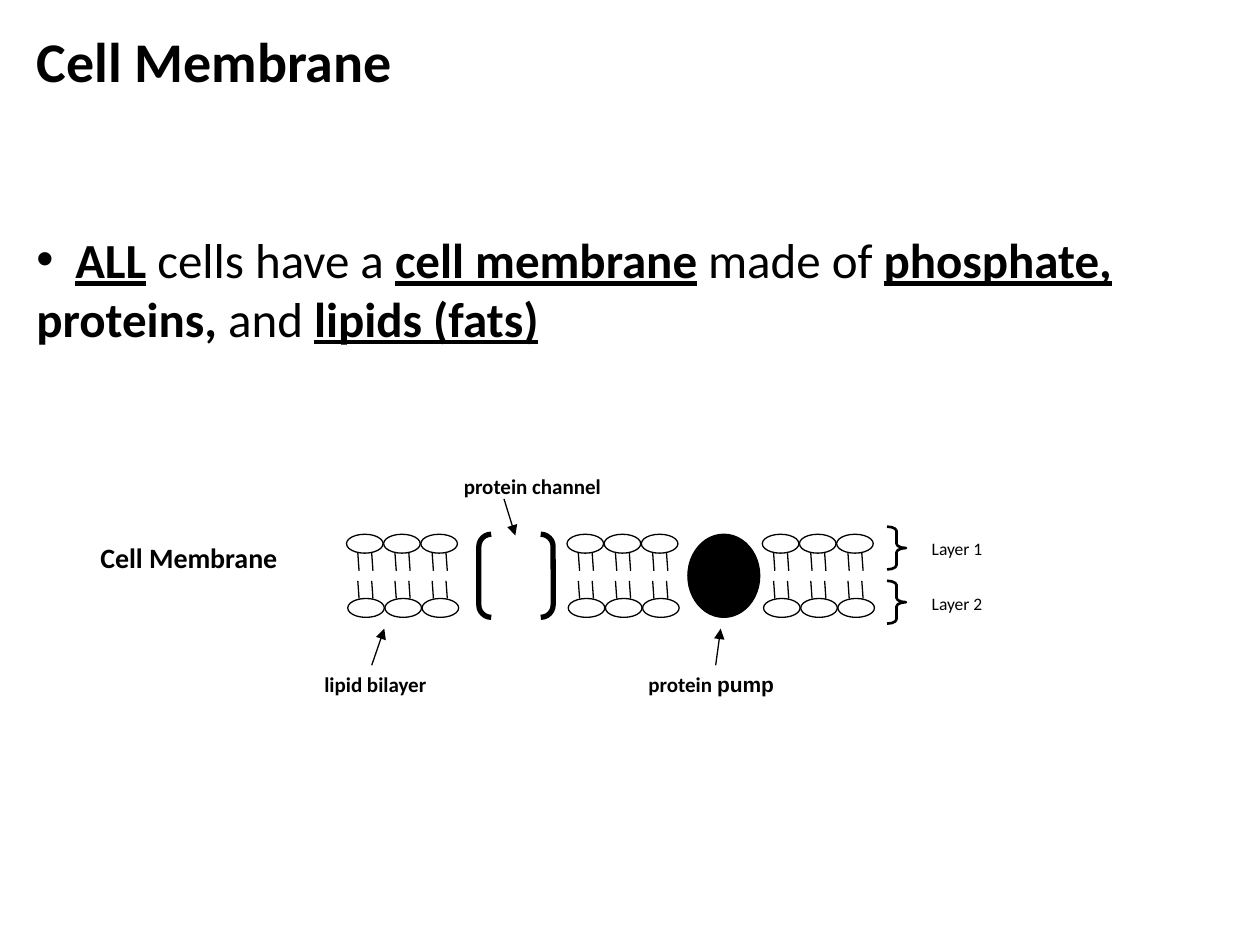
from lxml import etree
from pptx import Presentation
from pptx.dml.color import RGBColor
from pptx.enum.shapes import MSO_CONNECTOR, MSO_SHAPE
from pptx.enum.text import MSO_ANCHOR, MSO_AUTO_SIZE, PP_ALIGN
from pptx.oxml.ns import qn
from pptx.util import Inches, Pt

STRAIGHT = MSO_CONNECTOR.STRAIGHT
ELLIPSE = MSO_SHAPE.OVAL
RECTANGLE = MSO_SHAPE.RECTANGLE
BRACKETS = MSO_SHAPE.DOUBLE_BRACKET
BRACE = MSO_SHAPE.RIGHT_BRACE
LEFT, CENTER = PP_ALIGN.LEFT, PP_ALIGN.CENTER
TOP, MIDDLE = MSO_ANCHOR.TOP, MSO_ANCHOR.MIDDLE
NO_AUTOFIT = MSO_AUTO_SIZE.NONE

BLACK, WHITE = "000000", "FFFFFF"
FONT = "Calibri"

presentation = Presentation()
presentation.slide_width = Inches(10)
presentation.slide_height = Inches(7.5)
slide = presentation.slides.add_slide(presentation.slide_layouts[5])


def add_outlined(kind, left, top, width, height, fill=None, line=BLACK, weight=0.75):
    """Add a preset shape without shadow; no fill colour leaves it open."""
    shape = slide.shapes.add_shape(
        kind, Inches(left), Inches(top), Inches(width), Inches(height))
    shape.shadow.inherit = False
    if fill:
        shape.fill.solid()
        shape.fill.fore_color.rgb = RGBColor.from_string(fill)
    else:
        shape.fill.background()
    shape.line.color.rgb = RGBColor.from_string(line)
    shape.line.width = Pt(weight)
    return shape


def add_line(x1, y1, x2, y2, arrow=False):
    connector = slide.shapes.add_connector(
        STRAIGHT, Inches(x1), Inches(y1), Inches(x2), Inches(y2))
    connector.line.color.rgb = RGBColor.from_string(BLACK)
    connector.line.width = Pt(0.75)
    if arrow:
        line = connector.line._get_or_add_ln()
        etree.SubElement(line, qn("a:tailEnd"), type="triangle")
    etree.SubElement(connector._element.spPr, qn("a:effectLst"))


# Title
title = slide.shapes.title
title.left, title.top = Inches(0.19), Inches(0.16)
title.width, title.height = Inches(9.5), Inches(0.64)
title.text_frame.auto_size = NO_AUTOFIT
title.text_frame.vertical_anchor = MIDDLE
title.text_frame.text = "Cell Membrane"
paragraph = title.text_frame.paragraphs[0]
paragraph.alignment = LEFT
paragraph.font.name = FONT
paragraph.font.size = Pt(32)
paragraph.font.bold = True
paragraph.font.color.rgb = RGBColor.from_string(BLACK)

# Bulleted statement: text, bold, underline
statement = [
    ("\t", True, False),
    ("ALL", True, True),
    (" cells have a ", False, False),
    ("cell membrane", True, True),
    (" made of ", False, False),
    ("phosphate,", True, True),
    (" proteins,", True, False),
    (" and ", False, False),
    ("lipids (fats)", True, True),
]
body = slide.shapes.add_textbox(Inches(0.19), Inches(1.77), Inches(9.5), Inches(1.05))
body.text_frame.word_wrap = True
paragraph = body.text_frame.paragraphs[0]
paragraph.font.name = FONT
paragraph.font.size = Pt(28)
paragraph.font.color.rgb = RGBColor.from_string(BLACK)
for text, bold, underline in statement:
    run = paragraph.add_run()
    run.text = text
    run.font.bold = bold
    run.font.underline = underline
properties = paragraph._p.get_or_add_pPr()
properties.set("marL", "0")
properties.set("indent", "0")
bullet_parts = [
    etree.Element(qn("a:buFont"), typeface="Arial"),
    etree.Element(qn("a:buChar"), char="•"),
    etree.Element(qn("a:tabLst")),
]
etree.SubElement(bullet_parts[2], qn("a:tab"), pos=str(Inches(0.31)), algn="l")
for position, part in enumerate(bullet_parts):
    properties.insert(position, part)

# Lipid bilayer: three stretches of three lipids, mirrored in two layers
HEAD_WIDTH, HEAD_HEIGHT, HEAD_PITCH = 0.29, 0.15, 0.295
for stretch_left in (2.75, 4.5, 6.05):
    for column in range(3):
        left = stretch_left + column * HEAD_PITCH
        add_outlined(ELLIPSE, left, 4.24, HEAD_WIDTH, HEAD_HEIGHT, WHITE)
        add_outlined(ELLIPSE, left + 0.01, 4.75, HEAD_WIDTH, HEAD_HEIGHT, WHITE)
        for tail in (left + 0.09, left + 0.2):
            add_line(tail, 4.39, tail + 0.01, 4.53)
            add_line(tail + 0.01, 4.75, tail, 4.61)

# Proteins
channel = add_outlined(BRACKETS, 3.8, 4.24, 0.59, 0.66, weight=3)
channel.adjustments[0] = 0.167
pump = add_outlined(ELLIPSE, 5.46, 4.24, 0.57, 0.66, BLACK)

# Labels: left, top, width, height, size, bold, runs with their fonts
labels = [
    (0.67, 4.24, 1.66, 0.6, 16, True, [("Cell Membrane", FONT)]),
    (2.33, 5.28, 1.3, 0.31, 12, True, [("lipid bilayer", FONT)]),
    (3.35, 3.71, 1.75, 0.33, 12, True, [("protein channel", FONT)]),
    (4.9, 5.28, 1.49, 0.31, 12, True, [("protein ", FONT), ("pump", "Arial")]),
    (7.19, 4.22, 0.81, 0.3, 10, False, [("Layer 1", FONT)]),
    (7.19, 4.66, 0.81, 0.3, 10, False, [("Layer 2", FONT)]),
]
for left, top, width, height, size, bold, runs in labels:
    if bold:
        label = add_outlined(RECTANGLE, left, top, width, height, WHITE, WHITE)
    else:
        label = slide.shapes.add_textbox(
            Inches(left), Inches(top), Inches(width), Inches(height))
    label.text_frame.word_wrap = True
    label.text_frame.vertical_anchor = TOP
    paragraph = label.text_frame.paragraphs[0]
    paragraph.alignment = CENTER
    paragraph.font.size = Pt(size)
    paragraph.font.bold = bold
    paragraph.font.color.rgb = RGBColor.from_string(BLACK)
    for text, font_name in runs:
        run = paragraph.add_run()
        run.text = text
        run.font.name = font_name

# Pointers from labels to parts
add_line(2.95, 5.28, 3.05, 4.99, arrow=True)
add_line(4, 3.96, 4.09, 4.25, arrow=True)
add_line(5.68, 5.28, 5.72, 4.99, arrow=True)

# Layer braces
for top in (4.18, 4.61):
    brace = add_outlined(BRACE, 7.04, top, 0.15, 0.34, weight=1.5)
    brace.adjustments[0] = 0.229

presentation.save("out.pptx")
